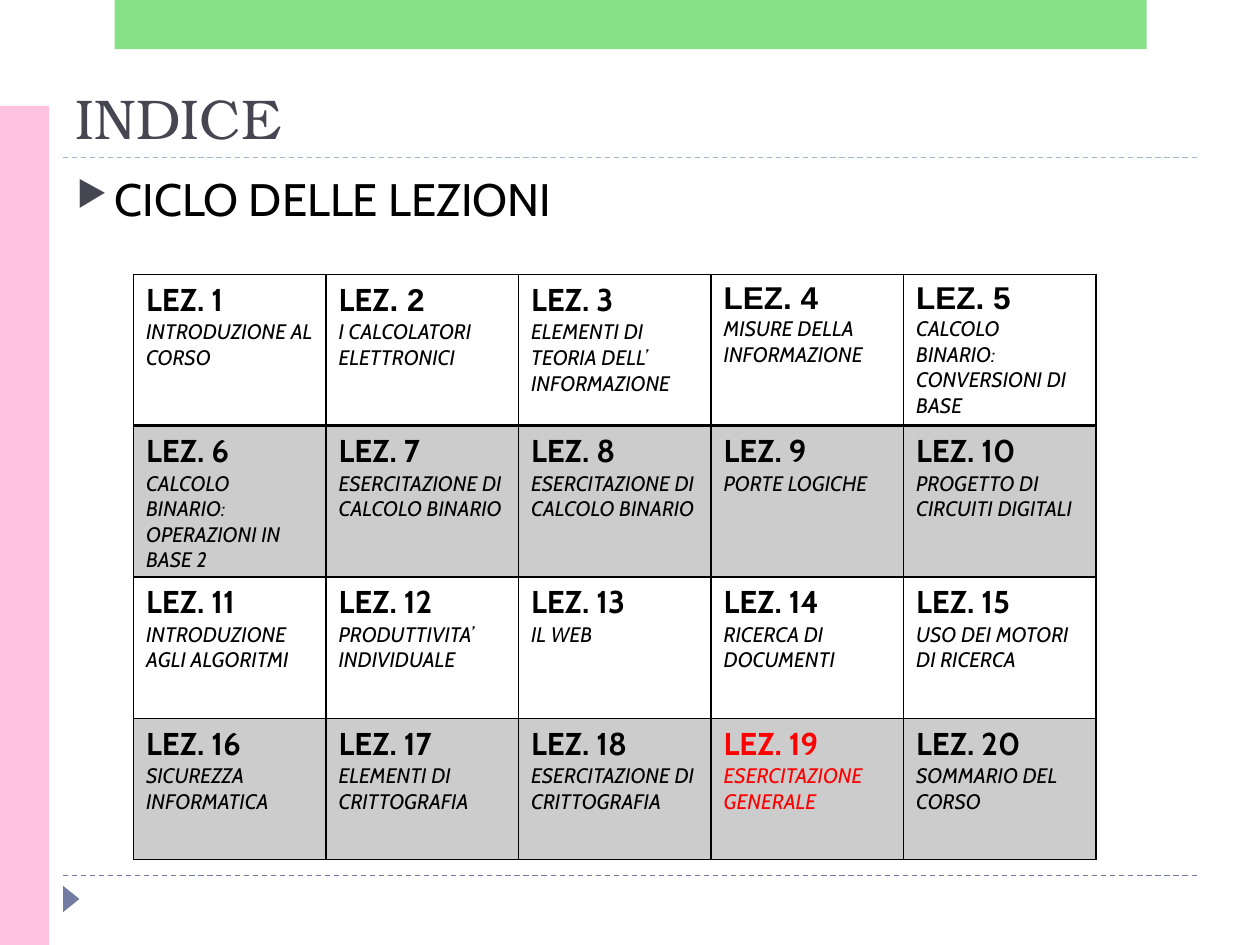
from lxml import etree
from pptx import Presentation
from pptx.dml.color import RGBColor
from pptx.enum.dml import MSO_LINE
from pptx.enum.shapes import MSO_CONNECTOR, MSO_SHAPE
from pptx.enum.text import MSO_ANCHOR, MSO_AUTO_SIZE, PP_ALIGN
from pptx.oxml.ns import qn
from pptx.util import Inches, Pt

STRAIGHT = MSO_CONNECTOR.STRAIGHT
RECTANGLE = MSO_SHAPE.RECTANGLE
TRIANGLE = MSO_SHAPE.ISOSCELES_TRIANGLE
DASH = MSO_LINE.DASH

COLORS = {
    "title": "464653", "text": "000000", "accent": "FF0000",
    "footer": "727CA3", "rule": "9FB8CD", "side": "FFC1E0", "top": "62D862",
}
LESSONS = [
    "INTRODUZIONE AL CORSO", "I CALCOLATORI ELETTRONICI",
    "ELEMENTI DI TEORIA DELL’ INFORMAZIONE", "MISURE DELLA INFORMAZIONE",
    "CALCOLO BINARIO: CONVERSIONI DI BASE",
    "CALCOLO BINARIO: OPERAZIONI IN BASE 2", "ESERCITAZIONE DI CALCOLO BINARIO",
    "ESERCITAZIONE DI CALCOLO BINARIO", "PORTE LOGICHE",
    "PROGETTO DI CIRCUITI DIGITALI",
    "INTRODUZIONE AGLI ALGORITMI", "PRODUTTIVITA’ INDIVIDUALE", "IL WEB",
    "RICERCA DI DOCUMENTI", "USO DEI MOTORI DI RICERCA",
    "SICUREZZA INFORMATICA", "ELEMENTI DI CRITTOGRAFIA",
    "ESERCITAZIONE DI CRITTOGRAFIA", "ESERCITAZIONE GENERALE",
    "SOMMARIO DEL CORSO",
]
COLUMNS, ROWS = 5, 4
# Lesson headings set partly or wholly in Arial
HEADING_RUNS = {
    2: [("LEZ", "Cabin"), (". 2", "Arial")],
    4: [("LEZ. 4", "Arial")],
    5: [("LEZ. 5", "Arial")],
}
HIGHLIGHTED_LESSON = 19


def add_run(paragraph, text, color="text", **formats):
    run = paragraph.add_run()
    run.text = text
    for name, value in formats.items():
        setattr(run.font, name, value)
    run.font.color.rgb = RGBColor.from_string(COLORS[color])


def fill_transparent(fill, color, opacity):
    """Give a solid fill with an opacity in percent."""
    fill.solid()
    fill.fore_color.rgb = RGBColor.from_string(COLORS[color])
    srgb = fill._xPr.find(qn("a:solidFill")).find(qn("a:srgbClr"))
    etree.SubElement(srgb, qn("a:alpha"), val=str(opacity * 1000))


prs = Presentation()
prs.slide_width, prs.slide_height = Inches(10), Inches(7.5)
slide = prs.slides.add_slide(prs.slide_layouts[5])
shapes = slide.shapes

# Dashed rules
for y, color in ((6.95, "footer"), (1.25, "rule")):
    rule = shapes.add_connector(STRAIGHT, Inches(0.5), Inches(y), Inches(9.5), Inches(y))
    rule.line.color.rgb = RGBColor.from_string(COLORS[color])
    rule.line.width = Pt(0.75)
    rule.line.dash_style = DASH
    etree.SubElement(rule._element.spPr, qn("a:effectLst"))

# Footer marker and colour bars
for preset, box, color, opacity, rotation in (
    (TRIANGLE, (0.46, 7.07, 0.21, 0.13), "footer", 100, 90),
    (RECTANGLE, (0, 0.84, 0.39, 6.66), "side", 100, 0),
    (RECTANGLE, (0.91, 0, 8.19, 0.39), "top", 76, 0),
):
    decoration = shapes.add_shape(preset, *map(Inches, box))
    decoration.rotation = rotation
    decoration.shadow.inherit = False
    decoration.line.fill.background()
    fill_transparent(decoration.fill, color, opacity)

# Title
title = shapes.title
title.left, title.top, title.width, title.height = map(Inches, (0.5, 0.55, 9, 0.7))
title.text_frame.auto_size = MSO_AUTO_SIZE.NONE
title.text_frame.vertical_anchor = MSO_ANCHOR.BOTTOM
heading = title.text_frame.paragraphs[0]
heading.alignment = PP_ALIGN.LEFT
add_run(heading, "INDICE", "title", size=Pt(32), name="TeX Gyre Bonum")

# Bulleted subtitle
subtitle = shapes.add_textbox(*map(Inches, (0.51, 1.31, 9, 0.79)))
subtitle.text_frame.word_wrap = True
cycle = subtitle.text_frame.paragraphs[0]
cycle_props = cycle._p.get_or_add_pPr()
cycle_props.set("marL", str(Inches(0.3)))
cycle_props.set("indent", str(-Inches(0.3)))
bullet_color = etree.SubElement(cycle_props, qn("a:buClr"))
etree.SubElement(bullet_color, qn("a:srgbClr"), val=COLORS["title"])
etree.SubElement(cycle_props, qn("a:buSzPct"), val="76000")
etree.SubElement(cycle_props, qn("a:buChar"), char="▶")
add_run(cycle, "CICLO DELLE LEZIONI", size=Pt(26), name="Cabin")

# Lesson table
lessons = shapes.add_table(ROWS, COLUMNS, *map(Inches, (1.06, 2.18, 7.64, 4.48))).table
lessons.first_row = lessons.horz_banding = False
for column in lessons.columns:
    column.width = Inches(7.64 / COLUMNS)
for row in lessons.rows:
    row.height = Inches(1.12)

for index, topic in enumerate(LESSONS):
    number = index + 1
    row, column = divmod(index, COLUMNS)
    cell = lessons.cell(row, column)
    color = "accent" if number == HIGHLIGHTED_LESSON else "text"

    lesson_heading = cell.text_frame.paragraphs[0]
    for text, font in HEADING_RUNS.get(number, [(f"LEZ. {number}", "Cabin")]):
        add_run(lesson_heading, text, color, size=Pt(18), name=font, bold=True)
    add_run(cell.text_frame.add_paragraph(), topic, color,
            size=Pt(12), name="Cabin", italic=True)

    cell_props = cell._tc.get_or_add_tcPr()
    for side in ("lnL", "lnR", "lnT", "lnB"):
        below_first_row = (row, side) in ((0, "lnB"), (1, "lnT"))
        border = etree.SubElement(cell_props, qn(f"a:{side}"),
                                  w=str(Pt(2 if below_first_row else 1)))
        border_fill = etree.SubElement(border, qn("a:solidFill"))
        etree.SubElement(border_fill, qn("a:srgbClr"), val=COLORS["text"])

    if row % 2:
        fill_transparent(cell.fill, "text", 20)
    else:
        cell.fill.background()

prs.save("out.pptx")
